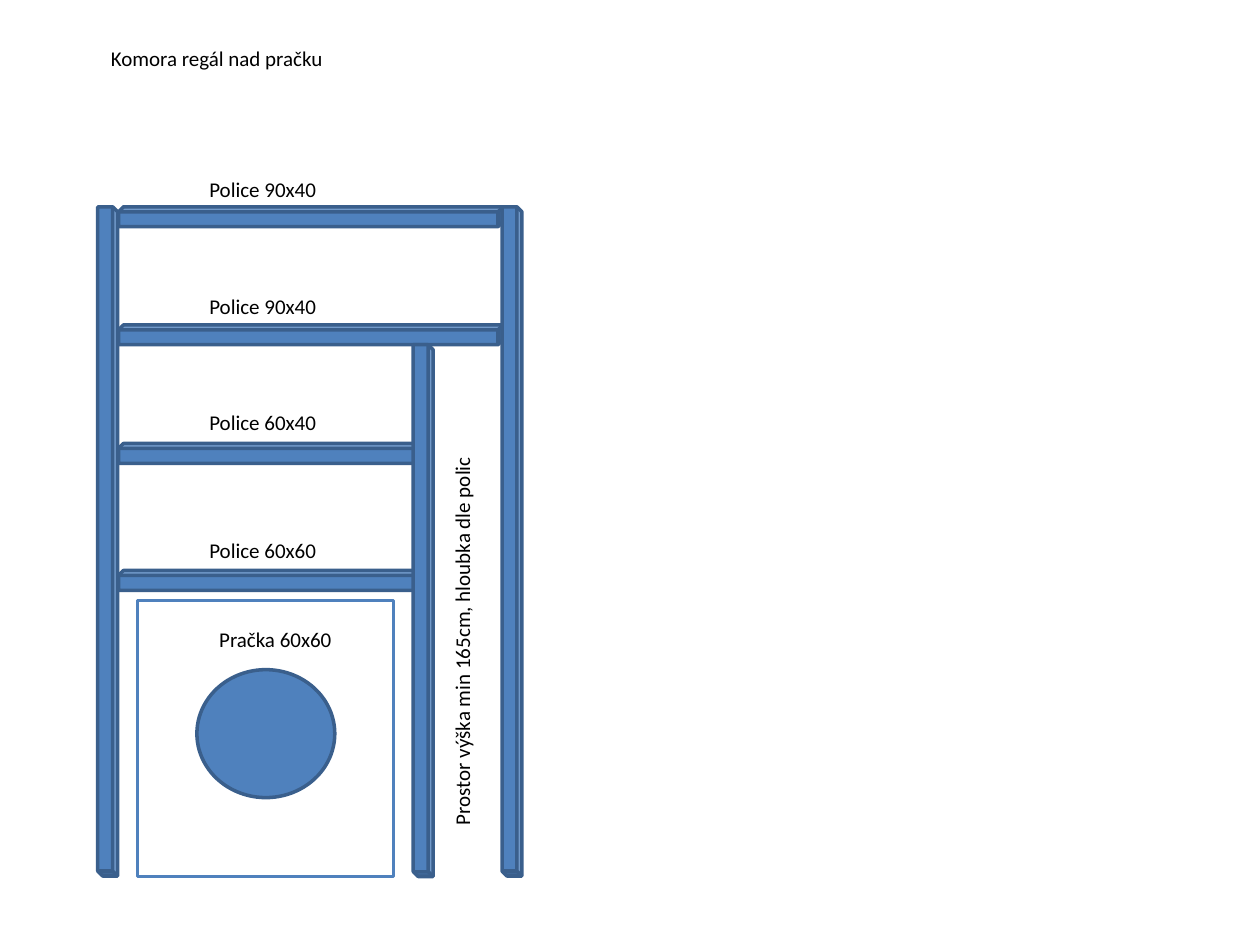
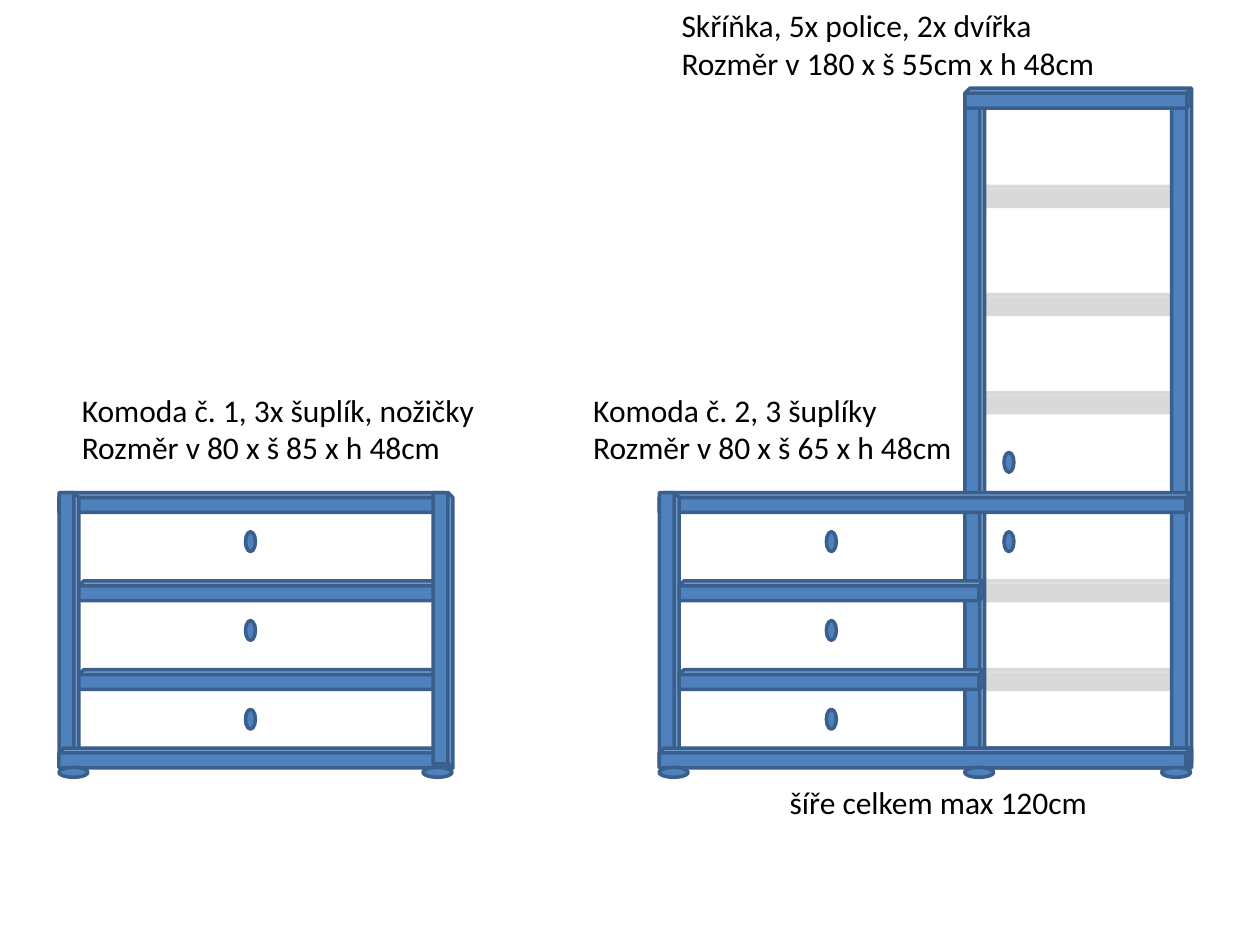
from pptx import Presentation
from pptx.dml.color import RGBColor
from pptx.enum import shapes, text
from pptx.util import Cm, Pt

BOARD_BLUE = RGBColor(0x4F, 0x81, 0xBD)
EDGE_BLUE = RGBColor(0x3A, 0x5F, 0x8C)
INNER_GREY = RGBColor(0xD9, 0xD9, 0xD9)
WHITE = RGBColor(0xFF, 0xFF, 0xFF)
BLACK = RGBColor(0, 0, 0)
FONT = "Calibri"

BOARD = 0.4  # thickness of every board, in cm
TALL_POST = 13.49
CHEST_TOP = 9.93
CHEST_BOTTOM = 15.08
CHEST_POST = 5.56
DRAWER_STEP = 1.79
FIRST_DRAWER = 11.71
FIRST_HANDLE = 10.72


def place(shape, left, top, width, height):
    shape.left, shape.top = Cm(left), Cm(top)
    shape.width, shape.height = Cm(width), Cm(height)


def add_part(slide, kind, left, top, width, height,
             fill=BOARD_BLUE, line=EDGE_BLUE):
    part = slide.shapes.add_shape(kind, Cm(left), Cm(top), Cm(width), Cm(height))
    part.shadow.inherit = False
    part.fill.solid()
    part.fill.fore_color.rgb = fill
    part.line.color.rgb = line
    part.line.width = Pt(2)
    return part


def add_shelf(slide, left, top, width, **colours):
    return add_part(slide, shapes.MSO_SHAPE.CUBE, left, top, width, BOARD, **colours)


def add_post(slide, left, top, length):
    """Stand a shelf board upright; left and top are those of the upright post."""
    shift = (length - BOARD) / 2
    post = add_shelf(slide, left - shift, top + shift, length)
    post.rotation = 90


def add_oval(slide, left, top, width, height):
    add_part(slide, shapes.MSO_SHAPE.OVAL, left, top, width, height)


def add_handle(slide, left, top):
    add_oval(slide, left, top, 0.2, 0.4)


def write(shape, lines, size):
    frame = shape.text_frame
    frame.word_wrap = True
    frame.auto_size = text.MSO_AUTO_SIZE.SHAPE_TO_FIT_TEXT
    frame.vertical_anchor = text.MSO_ANCHOR.TOP
    frame.text = "\n".join(lines)
    for paragraph in frame.paragraphs:
        paragraph.alignment = text.PP_ALIGN.LEFT
        paragraph.font.name = FONT
        paragraph.font.size = Pt(size)
        paragraph.font.color.rgb = BLACK


def add_label(slide, lines, left, top, width, height, size):
    label = slide.shapes.add_textbox(Cm(left), Cm(top), Cm(width), Cm(height))
    write(label, lines, size)
    return label


def add_chest(slide, left, width, drawer_width, handle_left):
    add_shelf(slide, left, CHEST_TOP, width)
    add_post(slide, left, CHEST_TOP, CHEST_POST)
    add_shelf(slide, left, CHEST_BOTTOM, width)
    for row in range(2):
        add_shelf(slide, left + BOARD, FIRST_DRAWER + row * DRAWER_STEP, drawer_width)
    for row in range(3):
        add_handle(slide, handle_left, FIRST_HANDLE + row * DRAWER_STEP)


def add_cupboard(slide, left, width):
    for top in (3.76, 5.94, 7.92, FIRST_DRAWER, FIRST_DRAWER + DRAWER_STEP):
        add_shelf(slide, left + 0.19, top, 4.37, fill=INNER_GREY, line=INNER_GREY)
    for post_left in (left + width - BOARD, left):
        add_post(slide, post_left, 1.99, TALL_POST)
    for top in (1.78, CHEST_BOTTOM):
        add_shelf(slide, left, top, width)


def build_washer_rack(presentation):
    slide = presentation.slides.add_slide(presentation.slide_layouts[5])
    title = slide.shapes.title
    place(title, 1.98, 0.79, 5.56, 0.77)
    write(title, ["Komora regál nad pračku"], 12)

    shelves = (("Police 60x60", 11.5, 6.15, 10.72), ("Police 60x40", 8.94, 6.15, 8.14),
               ("Police 90x40", 6.55, 7.75, 5.79), ("Police 90x40", 4.17, 7.75, 3.43))
    for _, top, width, _ in shelves:
        add_shelf(slide, 2.39, top, width)
    for left, top, length in ((1.97, 4.17, TALL_POST), (8.33, 6.95, 10.72),
                              (10.12, 4.17, TALL_POST)):
        add_post(slide, left, top, length)

    add_part(slide, shapes.MSO_SHAPE.RECTANGLE, 2.77, 12.11, 5.16, 5.56,
             fill=WHITE, line=BOARD_BLUE)
    add_oval(slide, 3.97, 13.5, 2.78, 2.58)
    add_label(slide, ["Pračka 60x60"], 4.17, 12.5, 3.17, 0.77, 12)
    for name, _, _, label_top in shelves:
        add_label(slide, [name], 3.97, label_top, 3.17, 0.77, 12)
    side_note = add_label(slide, ["Prostor výška min 165cm, hloubka dle polic"],
                          4.45, 11.63, 9.73, 0.77, 12)
    side_note.rotation = 270


def build_chests(presentation):
    slide = presentation.slides.add_slide(presentation.slide_layouts[6])
    add_cupboard(slide, 19.45, 4.57)
    add_chest(slide, 13.29, 10.72, 6.15, 16.66)
    for top in (9.12, FIRST_HANDLE):
        add_handle(slide, 20.24, top)
    add_chest(slide, 1.19, 7.75, 7.34, 4.95)
    add_post(slide, 8.73, CHEST_TOP, CHEST_POST)
    for left in (1.19, 8.53, 13.29, 19.45, 23.42):
        add_oval(slide, left, 15.47, 0.58, 0.2)

    labels = (
        (["Komoda č. 1, 3x šuplík, nožičky", "Rozměr v 80 x š 85 x h 48cm"],
         1.4, 7.75, 10.11, 1.8),
        (["Komoda č. 2, 3 šuplíky", "Rozměr v 80 x š 65 x h 48cm"],
         11.71, 7.75, 8.13, 1.8),
        (["Skříňka, 5x police, 2x dvířka", "Rozměr v 180 x š 55cm x h 48cm"],
         13.49, 0, 11.3, 1.8),
        (["šíře celkem max 120cm"], 15.67, 15.67, 7.54, 1.03),
    )
    for lines, *box in labels:
        add_label(slide, lines, *box, size=18)


def main():
    presentation = Presentation()
    presentation.slide_width, presentation.slide_height = Cm(25.4), Cm(19.05)
    build_washer_rack(presentation)
    build_chests(presentation)
    presentation.save("out.pptx")


if __name__ == "__main__":
    main()
